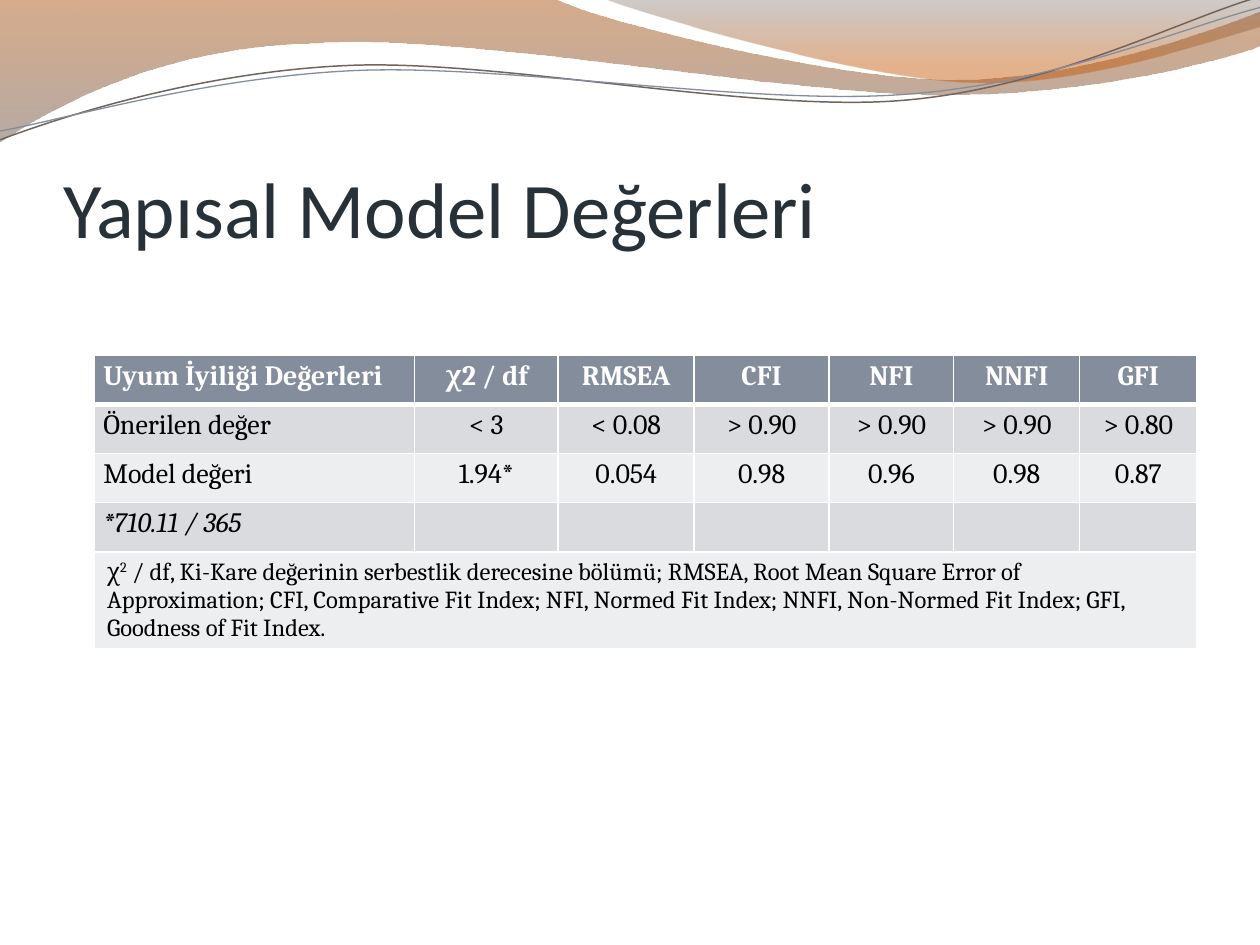
"""Build the structural model fit values slide with its wave header and table."""
from lxml.etree import SubElement
from pptx import Presentation
from pptx.dml.color import RGBColor
from pptx.enum.text import MSO_ANCHOR as Anchor, PP_ALIGN as Align
from pptx.oxml.ns import qn
from pptx.util import Inches, Pt

COLORS = {
    "title": "283138", "white": "FFFFFF", "text": "000000",
    "header": "838D9B", "dark_band": "D9DBDE", "light_band": "EDEEEF",
    "rust": "A44700", "taupe": "7A655B", "brown": "61534C", "orange": "C45400",
    "brown_line": "71645E", "slate_line": "838D9B",
}
TITLE = "Yapısal Model Değerleri"
ROWS = [
    ["Uyum İyiliği Değerleri", "χ2 / df", "RMSEA", "CFI", "NFI", "NNFI", "GFI"],
    ["Önerilen değer", "< 3", "< 0.08", "> 0.90", "> 0.90", "> 0.90", "> 0.80"],
    ["Model değeri", "1.94*", "0.054", "0.98", "0.96", "0.98", "0.87"],
    ["*710.11 / 365", "", "", "", "", "", ""],
]
NOTE = [
    ("χ", False),
    ("2", True),
    (" / df, Ki-Kare değerinin serbestlik derecesine bölümü; RMSEA, Root Mean Square "
     "Error of Approximation; CFI, Comparative Fit Index; NFI, Normed Fit Index; NNFI, "
     "Non-Normed Fit Index; GFI, Goodness of Fit Index.", False),
]
COLUMN_WIDTHS = [2.54, 1.14, 1.08, 1.07, 0.99, 1, 0.93]
ROW_HEIGHTS = [0.39] * len(ROWS) + [0.77]

WAVES = [
    {"segments": [(0, 0), (4.4, -0.01), (4.76, 0.17, 6.64, 0.63, 7.58, 0.63),
                  (8.53, 0.63, 9.58, 0.26, 10, 0.09), (10.01, 0.36),
                  (9.83, 0.44, 8.7, 0.76, 7.46, 0.75),
                  (6.22, 0.75, 3.82, 0.28, 2.57, 0.34),
                  (1.29, 0.36, 0.46, 0.83, -0.01, 1.13)],
     "stops": [(0, "rust", 45), (1, "taupe", 55)]},
    {"segments": [(4.79, -0.01), (5.09, 0.11, 6.82, 0.62, 7.69, 0.65),
                  (8.56, 0.69, 9.61, 0.32, 10, 0.21), (10, 0)],
     "stops": [(0, "brown", 30), (0.8, "orange", 45)]},
    {"segments": [(0, 1.11), (0.48, 0.93, 1.58, 0.57, 2.77, 0.52),
                  (3.95, 0.47, 5.93, 0.89, 7.13, 0.8),
                  (8.33, 0.71, 9.38, 0.15, 9.98, -0.02)],
     "line": ("brown_line", 0.85)},
    {"segments": [(0, 1.04), (0.47, 0.96, 1.64, 0.61, 2.83, 0.56),
                  (4.03, 0.51, 5.97, 0.84, 7.17, 0.75),
                  (8.36, 0.67, 9.41, 0.21, 10, 0.06)],
     "line": ("slate_line", 0.75)},
]


def color(name):
    return RGBColor.from_string(COLORS[name])


def bend(shape, segments):
    steps = list(shape._element.spPr.iter(qn("a:lnTo")))
    for step, segment in zip(steps, segments[1:]):
        if len(segment) == 2:
            continue
        step.tag = qn("a:cubicBezTo")
        for point in list(step):
            step.remove(point)
        for x, y in zip(segment[::2], segment[1::2]):
            SubElement(step, qn("a:pt"), x=str(Inches(x) - shape.left),
                       y=str(Inches(y) - shape.top))


def add_wave(slide, segments, stops=None, line=None):
    start, *ends = [(Inches(segment[-2]), Inches(segment[-1])) for segment in segments]
    builder = slide.shapes.build_freeform(*start)
    builder.add_line_segments(ends, close=stops is not None)
    shape = builder.convert_to_shape()
    bend(shape, segments)
    shape.shadow.inherit = False
    if line:
        shape.fill.background()
        shape.line.color.rgb = color(line[0])
        shape.line.width = Pt(line[1])
        return
    shape.line.fill.background()
    shape.fill.gradient()
    shape.fill.gradient_angle = 270
    for stop, (position, name, _) in zip(shape.fill.gradient_stops, stops):
        stop.position = position
        stop.color.rgb = color(name)
    for rgb, (_, _, opacity) in zip(shape._element.spPr.iter(qn("a:srgbClr")), stops):
        SubElement(rgb, qn("a:alpha"), val=str(opacity * 1000))


def add_title(slide):
    title = slide.shapes.title
    title.left, title.top, title.width, title.height = map(Inches, (0.5, 0.77, 9, 1.25))
    frame = title.text_frame
    frame.text = TITLE
    frame.word_wrap = True
    frame.vertical_anchor = Anchor.BOTTOM
    frame.margin_left = frame.margin_right = frame.margin_bottom = 0
    paragraph = frame.paragraphs[0]
    paragraph.alignment = Align.LEFT
    set_font(paragraph, "Calibri", 45, "title")


def set_font(paragraph, name, size, color_name, bold=False, italic=False):
    font = paragraph.font
    font.name, font.size, font.bold, font.italic = name, Pt(size), bold, italic
    font.color.rgb = color(color_name)


def style_cell(cell, fill_name, top=1, bottom=1):
    properties = cell._tc.get_or_add_tcPr()
    for side, points in (("L", 1), ("R", 1), ("T", top), ("B", bottom)):
        border = SubElement(properties, qn(f"a:ln{side}"), w=str(Pt(points)))
        SubElement(SubElement(border, qn("a:solidFill")), qn("a:srgbClr"), val=COLORS["white"])
    cell.fill.solid()
    cell.fill.fore_color.rgb = color(fill_name)


def fill_value_cell(cell, text, row, column):
    cell.margin_left = cell.margin_right = Inches(0.07)
    cell.margin_top = cell.margin_bottom = 0
    paragraph = cell.text_frame.paragraphs[0]
    if text:
        paragraph.text = text
    paragraph.alignment = Align.CENTER if column else Align.LEFT
    paragraph.line_spacing = 1.15
    paragraph.space_after = Pt(3)
    set_font(paragraph, "Cambria", 16, "text" if row else "white",
             bold=row == 0, italic=text.startswith("*"))


def fill_note_cell(cell):
    paragraph = cell.text_frame.paragraphs[0]
    set_font(paragraph, "Cambria", 14, "text")
    for text, raised in NOTE:
        run = paragraph.add_run()
        run.text = text
        if raised:
            run._r.get_or_add_rPr().set("baseline", "30000")


def add_fit_table(slide):
    table = slide.shapes.add_table(
        len(ROW_HEIGHTS), len(COLUMN_WIDTHS), Inches(0.75), Inches(2.82),
        Inches(sum(COLUMN_WIDTHS)), Inches(sum(ROW_HEIGHTS))).table
    for column, width in zip(table.columns, COLUMN_WIDTHS):
        column.width = Inches(width)
    for row, height in zip(table.rows, ROW_HEIGHTS):
        row.height = Inches(height)
    for row in range(len(ROW_HEIGHTS)):
        band = "dark_band" if row % 2 else "light_band"
        for column in range(len(COLUMN_WIDTHS)):
            style_cell(table.cell(row, column), band if row else "header",
                       top=3 if row == 1 else 1, bottom=1 if row else 3)
    for row, texts in enumerate(ROWS):
        for column, text in enumerate(texts):
            fill_value_cell(table.cell(row, column), text, row, column)
    note = table.cell(len(ROWS), 0)
    note.merge(table.cell(len(ROWS), len(COLUMN_WIDTHS) - 1))
    note.margin_right = Inches(0.12)
    fill_note_cell(note)


def main():
    presentation = Presentation()
    presentation.slide_width, presentation.slide_height = Inches(10), Inches(7.5)
    slide = presentation.slides.add_slide(presentation.slide_layouts[5])
    for wave in WAVES:
        add_wave(slide, **wave)
    add_title(slide)
    add_fit_table(slide)
    presentation.save("out.pptx")


if __name__ == "__main__":
    main()
